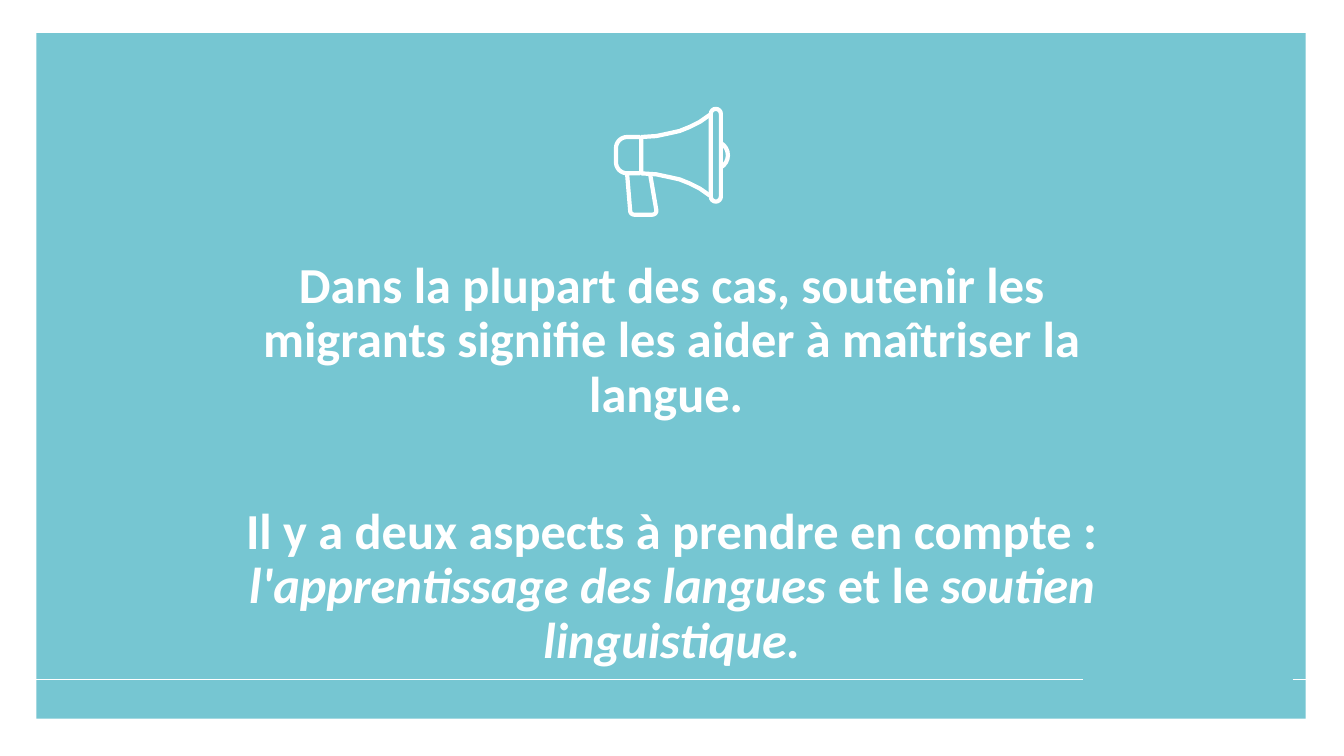
from math import cos, radians, sin

from lxml import etree
from pptx import Presentation
from pptx.dml.color import RGBColor
from pptx.enum.shapes import MSO_CONNECTOR as Link, MSO_SHAPE as Kind
from pptx.enum.text import PP_ALIGN as Align
from pptx.oxml.ns import qn
from pptx.util import Inches, Pt

TEAL = RGBColor(0x76, 0xC6, 0xD2)
WHITE = RGBColor(0xFF, 0xFF, 0xFF)
MID = 1.54  # height of the megaphone's axis


def arc(x, y, r, start, end, steps=8):
    """Points on a circle; angles grow clockwise from the right."""
    turns = [radians(start + (end - start) * i / steps) for i in range(steps + 1)]
    return [(x + r * cos(t), y + r * sin(t)) for t in turns]


class Page:
    font = "Calibri"
    size = Pt(36)

    def __init__(self, slide):
        self.shapes = slide.shapes

    def panel(self, x, y, w, h):
        box = self.shapes.add_shape(
            Kind.RECTANGLE, Inches(x), Inches(y), Inches(w), Inches(h))
        box.shadow.inherit = False
        box.fill.solid()
        box.fill.fore_color.rgb = TEAL
        box.line.fill.background()

    def rule(self, left, right, y):
        line = self.shapes.add_connector(
            Link.STRAIGHT, Inches(left), Inches(y), Inches(right), Inches(y))
        line.line.color.rgb = WHITE
        line.line.width = Pt(0.5)
        etree.SubElement(line._element.spPr, qn("a:effectLst"))

    def stroke(self, points, close=False):
        spots = [(Inches(x), Inches(y)) for x, y in points]
        pen = self.shapes.build_freeform(*spots[0])
        pen.add_line_segments(spots[1:], close=close)
        shape = pen.convert_to_shape()
        shape.shadow.inherit = False
        shape.fill.background()
        shape.line.color.rgb = WHITE
        shape.line.width = Pt(3)

    def text(self, x, y, w, h, paras, gap):
        box = self.shapes.add_textbox(Inches(x), Inches(y), Inches(w), Inches(h))
        frame = box.text_frame
        frame.word_wrap = True
        for i, runs in enumerate(paras):
            para = frame.add_paragraph() if i else frame.paragraphs[0]
            para.alignment = Align.CENTER
            para.line_spacing = 0.9
            para.space_before = Pt(gap if i else 0)
            for words, slant in runs:
                run = para.add_run()
                run.text = words
                font = run.font
                font.name, font.size = self.font, self.size
                font.bold, font.italic = True, slant
                font.color.rgb = WHITE


def main():
    deck = Presentation()
    deck.slide_width, deck.slide_height = Inches(13.33), Inches(7.5)
    page = Page(deck.slides.add_slide(deck.slide_layouts[6]))

    # Background panel and footer rules
    page.panel(0.36, 0.33, 12.59, 6.8)
    page.rule(0.05, 10.74, 6.74)
    page.rule(12.82, 13.33, 6.74)

    # Message
    page.text(2.18, 2.53, 8.97, 4.01, [
        [("Dans la plupart des cas, soutenir les migrants signifie "
          "les aider à maîtriser la langue. ", False)],
        [("Il y a deux aspects à prendre en compte : ", False),
         ("l'apprentissage des langues", True),
         (" et le ", False),
         ("soutien linguistique.", True)],
    ], gap=59)

    # Megaphone: grip, knob, rear, horn, rim
    page.stroke([(6.22, 1.73), *arc(6.29, 2.09, 0.04, 180, 90),
                 *arc(6.47, 2.09, 0.04, 90, 0), (6.45, 1.74)])
    page.stroke(arc(7.08, MID, 0.14, 60, -60))
    page.stroke([(6.35, 1.36), *arc(6.22, 1.47, 0.11, 270, 180),
                 *arc(6.22, 1.61, 0.11, 180, 90), (6.35, 1.72)])
    top = [(7.04, 1.14), (6.94, 1.21), (6.84, 1.26), (6.74, 1.3),
           (6.65, 1.32), (6.51, 1.35), (6.36, 1.36)]
    page.stroke(top + [(x, 2 * MID - y) for x, y in reversed(top)])
    page.stroke(arc(7.1, 1.13, 0.05, 180, 360) + arc(7.1, 1.95, 0.05, 0, 180),
                close=True)

    deck.save("out.pptx")


if __name__ == "__main__":
    main()
